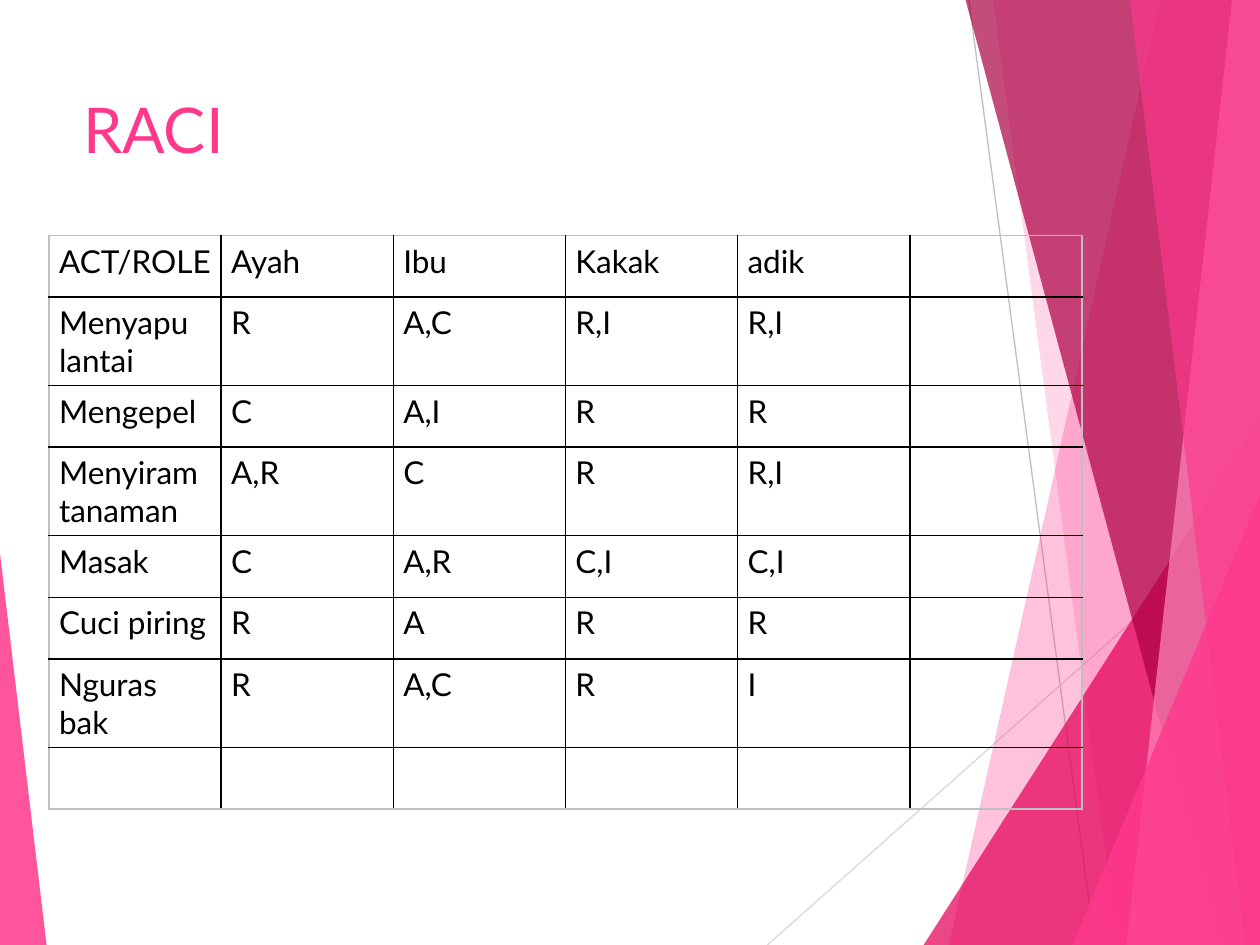
from dataclasses import dataclass

from lxml.etree import SubElement
from pptx import Presentation
from pptx.dml.color import RGBColor
from pptx.enum.shapes import MSO_CONNECTOR, MSO_SHAPE
from pptx.enum.text import MSO_ANCHOR, PP_ALIGN
from pptx.oxml.ns import qn
from pptx.util import Cm, Pt


@dataclass(frozen=True)
class Theme:
    font: str = "Lato"
    title_size: int = 36
    body_size: int = 18
    pink: str = "FF388C"
    rose: str = "E40059"
    wine: str = "AB0043"
    blush: str = "FF88BA"
    text: str = "000000"
    grid: str = "000000"
    frame: str = "BFBFBF"
    light_line: str = "D9D9D9"


THEME = Theme()
WIDTH, HEIGHT = 25.4, 19.05

TITLE = "RACI"
ROWS = [
    ["ACT/ROLE", "Ayah", "Ibu", "Kakak", "adik", ""],
    ["Menyapu lantai", "R", "A,C", "R,I", "R,I", ""],
    ["Mengepel", "C", "A,I", "R", "R", ""],
    ["Menyiram tanaman", "A,R", "C", "R", "R,I", ""],
    ["Masak", "C", "A,R", "C,I", "C,I", ""],
    ["Cuci piring", "R", "A", "R", "R", ""],
    ["Nguras bak", "R", "A,C", "R", "I", ""],
    [""] * 6,
]
TABLE_LEFT, TABLE_TOP = 0.99, 4.75
COLUMN_WIDTH, ROW_HEIGHT = 3.47, 1.24

RAYS = [
    (19.53, 0, 22.07, HEIGHT, THEME.frame),
    (WIDTH, 10.24, 15.47, HEIGHT, THEME.light_line),
]
# band: top x, bottom x; triangle: left, right, top, apex
FACETS = [
    ("band", (23.39, 19.13), THEME.pink, 30),
    ("band", (20.02, 22.53), THEME.pink, 20),
    ("triangle", (18.62, WIDTH, 8.46, 1), THEME.rose, 72),
    ("band", (19.46, 24.59), THEME.wine, 70),
    ("band", (24.84, 22.71), THEME.blush, 70),
    ("band", (22.78, 25.1), THEME.pink, 65),
    ("triangle", (21.62, WIDTH, 9.98, 1), THEME.pink, 80),
    ("triangle", (0, 0.94, 11.15, 0), THEME.pink, 85),
]


def add_ray(page, x1, y1, x2, y2, color):
    ray = page.shapes.add_connector(
        MSO_CONNECTOR.STRAIGHT, Cm(x1), Cm(y1), Cm(x2), Cm(y2))
    ray.line.color.rgb = RGBColor.from_string(color)
    ray.line.width = Pt(0.75)
    SubElement(ray.element.spPr, qn("a:effectLst"))


def add_band(page, top_x, bottom_x):
    builder = page.shapes.build_freeform(Cm(top_x), Cm(-0.02))
    corners = [(WIDTH, -0.02), (WIDTH, HEIGHT), (bottom_x, HEIGHT)]
    builder.add_line_segments([(Cm(x), Cm(y)) for x, y in corners], close=True)
    return builder.convert_to_shape()


def add_triangle(page, left, right, top, apex):
    triangle = page.shapes.add_shape(
        MSO_SHAPE.ISOSCELES_TRIANGLE,
        Cm(left), Cm(top), Cm(right - left), Cm(HEIGHT - top))
    triangle.adjustments[0] = apex
    return triangle


def paint(shape, color, opacity):
    shape.shadow.inherit = False
    shape.line.fill.background()
    shape.fill.solid()
    shape.fill.fore_color.rgb = RGBColor.from_string(color)
    color_node = shape.element.spPr.find(qn("a:solidFill"))[0]
    SubElement(color_node, qn("a:alpha"), val=str(opacity * 1000))


def style_text(para, size, color):
    para.font.name = THEME.font
    para.font.size = Pt(size)
    para.font.color.rgb = RGBColor.from_string(color)


def place_title(page):
    title = page.shapes.title
    title.left, title.top = Cm(1.42), Cm(1.7)
    title.width, title.height = Cm(17.91), Cm(3.66)
    title.element.getparent().append(title.element)
    frame = title.text_frame
    frame.text = TITLE
    frame.vertical_anchor = MSO_ANCHOR.TOP
    para = frame.paragraphs[0]
    para.alignment = PP_ALIGN.LEFT
    style_text(para, THEME.title_size, THEME.pink)


def add_borders(cell, outer_sides):
    properties = cell._tc.get_or_add_tcPr()
    for side, is_outer in outer_sides.items():
        line = SubElement(properties, qn(f"a:ln{side}"), w=str(Pt(1)))
        fill = SubElement(line, qn("a:solidFill"))
        color = THEME.frame if is_outer else THEME.grid
        SubElement(fill, qn("a:srgbClr"), val=color)


def add_matrix(page):
    row_count, column_count = len(ROWS), len(ROWS[0])
    table = page.shapes.add_table(
        row_count, column_count, Cm(TABLE_LEFT), Cm(TABLE_TOP),
        Cm(COLUMN_WIDTH * column_count), Cm(ROW_HEIGHT * row_count)).table
    table.first_row = table.horz_banding = False
    for column in table.columns:
        column.width = Cm(COLUMN_WIDTH)
    for row_index, values in enumerate(ROWS):
        table.rows[row_index].height = Cm(ROW_HEIGHT)
        for column_index, value in enumerate(values):
            cell = table.cell(row_index, column_index)
            cell.text = value
            cell.margin_left = cell.margin_right = Cm(0.2)
            cell.margin_top = cell.margin_bottom = Cm(0.13)
            style_text(cell.text_frame.paragraphs[0], THEME.body_size, THEME.text)
            add_borders(cell, {
                "L": column_index == 0,
                "R": column_index == column_count - 1,
                "T": row_index == 0,
                "B": row_index == row_count - 1,
            })
            cell.fill.background()


def main():
    deck = Presentation()
    deck.slide_width, deck.slide_height = Cm(WIDTH), Cm(HEIGHT)
    page = deck.slides.add_slide(deck.slide_layouts.get_by_name("Title Only"))
    for ray in RAYS:
        add_ray(page, *ray)
    builders = {"band": add_band, "triangle": add_triangle}
    for kind, geometry, color, opacity in FACETS:
        paint(builders[kind](page, *geometry), color, opacity)
    place_title(page)
    add_matrix(page)
    deck.save("out.pptx")


if __name__ == "__main__":
    main()
